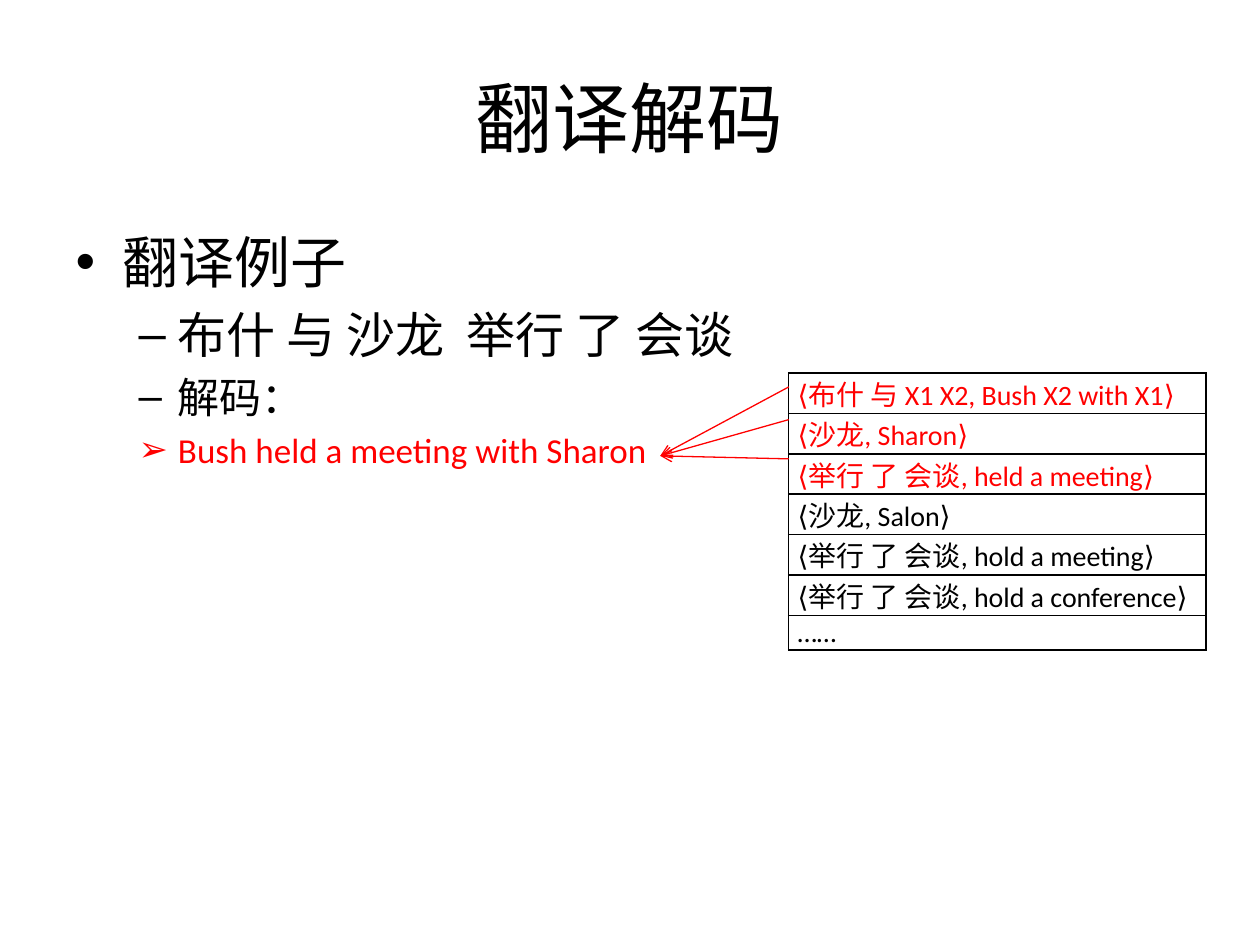
from lxml.etree import SubElement
from pptx import Presentation
from pptx.dml.color import RGBColor
from pptx.enum.shapes import MSO_CONNECTOR
from pptx.enum.text import MSO_ANCHOR, PP_ALIGN
from pptx.oxml import parse_xml
from pptx.oxml.ns import nsdecls, qn
from pptx.util import Cm, Pt

COLORS = {"text": "000000", "chosen": "FF0000", "border": "000000"}
FONT = "Calibri"

OUTLINE = [
    ("翻译例子", 0, 32, "text", "•"),
    ("布什 与 沙龙  举行 了 会谈", 1, 28, "text", "–"),
    ("解码：", 1, 24, "text", "–"),
    ("Bush held a meeting with Sharon", 1, 20, "chosen", "➢"),
]
RULES = [
    ("⟨布什 与 X1 X2, Bush X2 with X1⟩", "chosen"),
    ("⟨沙龙, Sharon⟩", "chosen"),
    ("⟨举行 了 会谈, held a meeting⟩", "chosen"),
    ("⟨沙龙, Salon⟩", "text"),
    ("⟨举行 了 会谈, hold a meeting⟩", "text"),
    ("⟨举行 了 会谈, hold a conference⟩", "text"),
    ("……", "text"),
]


def rgb(name):
    return RGBColor.from_string(COLORS[name])


def place(shape, box):
    shape.left, shape.top, shape.width, shape.height = (Cm(v) for v in box)


def format_runs(paragraph, size, color):
    for run in paragraph.runs:
        run.font.name = FONT
        run.font.size = Pt(size)
        run.font.color.rgb = rgb(color)


def set_bullet(paragraph, mark):
    props = paragraph._p.get_or_add_pPr()
    SubElement(props, qn("a:buFont")).set("typeface", "Arial")
    SubElement(props, qn("a:buChar")).set("char", mark)


def add_heading(slide, box):
    heading = slide.shapes.title
    place(heading, box)
    frame = heading.text_frame
    frame.text = "翻译解码"
    frame.vertical_anchor = MSO_ANCHOR.MIDDLE
    frame.paragraphs[0].alignment = PP_ALIGN.CENTER
    format_runs(frame.paragraphs[0], 44, "text")


def add_outline(slide, box):
    outline = slide.placeholders[1]
    place(outline, box)
    frame = outline.text_frame
    frame.text = "\n".join(item[0] for item in OUTLINE)
    for paragraph, (_, level, size, color, mark) in zip(frame.paragraphs, OUTLINE):
        paragraph.level = level
        set_bullet(paragraph, mark)
        format_runs(paragraph, size, color)


def draw_borders(cell):
    props = cell._tc.get_or_add_tcPr()
    for position, side in enumerate(("lnL", "lnR", "lnT", "lnB")):
        props.insert(position, parse_xml(
            f'<a:{side} {nsdecls("a")} w="{Pt(1)}"><a:solidFill>'
            f'<a:srgbClr val="{COLORS["border"]}"/></a:solidFill></a:{side}>'))


def add_rule_table(slide, box):
    table = slide.shapes.add_table(len(RULES), 1, *(Cm(v) for v in box)).table
    table.first_row = table.horz_banding = False
    for cell, (rule, color) in zip(table.iter_cells(), RULES):
        cell.margin_left = cell.margin_right = Cm(0.18)
        cell.margin_top = cell.margin_bottom = 0
        cell.text_frame.text = rule
        format_runs(cell.text_frame.paragraphs[0], 16, color)
        cell.fill.background()
        draw_borders(cell)


def add_rule_arrows(slide, box, target):
    left, top = box[:2]
    for drop in (0.28, 0.94, 1.73):
        arrow = slide.shapes.add_connector(
            MSO_CONNECTOR.STRAIGHT, Cm(left), Cm(top + drop), *(Cm(v) for v in target))
        arrow.line.color.rgb = rgb("chosen")
        arrow.line.width = Pt(0.75)
        SubElement(arrow.line._get_or_add_ln(), qn("a:tailEnd")).set("type", "arrow")
        SubElement(arrow._element.spPr, qn("a:effectLst"))


def main():
    deck = Presentation()
    deck.slide_width, deck.slide_height = Cm(25.4), Cm(19.05)
    slide = deck.slides.add_slide(deck.slide_layouts[1])
    rules_box = (15.9, 7.52, 8.41, 4.9)
    add_heading(slide, (1.27, 0.76, 22.86, 3.18))
    add_outline(slide, (1.27, 4.45, 22.86, 12.57))
    add_rule_table(slide, rules_box)
    add_rule_arrows(slide, rules_box, target=(13.31, 9.19))
    deck.save("out.pptx")


if __name__ == "__main__":
    main()
